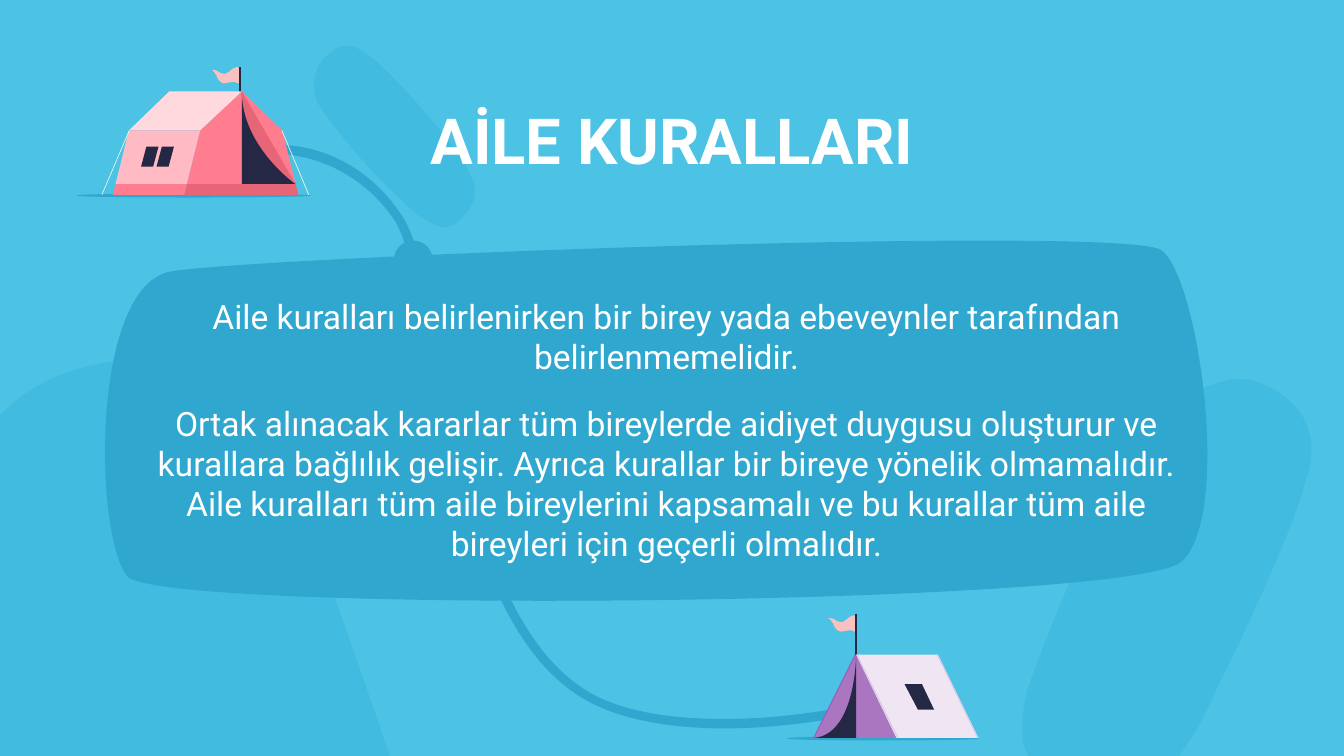
from pptx import Presentation
from pptx.dml.color import RGBColor
from pptx.enum.shapes import MSO_SHAPE as Preset
from pptx.enum.text import MSO_ANCHOR as Anchor, MSO_AUTO_SIZE as AutoSize, PP_ALIGN as Align
from pptx.oxml.ns import qn
from pptx.util import Inches, Pt

SKY = RGBColor(0x4C, 0xC3, 0xE5)
SKY_SHADE = RGBColor(0x42, 0xBB, 0xE0)
OCEAN = RGBColor(0x30, 0xA7, 0xCE)
WHITE = RGBColor(0xFF, 0xFF, 0xFF)
NAVY = RGBColor(0x25, 0x28, 0x45)
FLAG_PINK = RGBColor(0xF9, 0xC2, 0xC0)
CORAL = RGBColor(0xFF, 0x7D, 0x8E)
DARK_CORAL = RGBColor(0xE6, 0x65, 0x77)
LIGHT_CORAL = RGBColor(0xFF, 0xBA, 0xC3)
PALE_CORAL = RGBColor(0xFF, 0xD9, 0xDE)
ROPE_CREAM = RGBColor(0xFD, 0xFB, 0xE2)
PURPLE = RGBColor(0xA9, 0x76, 0xBF)
DARK_PURPLE = RGBColor(0xA1, 0x5C, 0xBF)
LILAC = RGBColor(0xEF, 0xE5, 0xF3)
DARK_LILAC = RGBColor(0xDE, 0xCB, 0xE7)

FONT = "Roboto"

presentation = Presentation()
presentation.slide_width = Inches(10)
presentation.slide_height = Inches(5.625)
slide = presentation.slides.add_slide(presentation.slide_layouts[1])
slide.background.fill.solid()
slide.background.fill.fore_color.rgb = SKY

# The grid has 1000 columns across the slide, and square cells
CELL = presentation.slide_width // 1000
BOTTOM = presentation.slide_height / CELL


def paint(shape, color):
    shape.shadow.inherit = False
    shape.fill.solid()
    shape.fill.fore_color.rgb = color
    shape.line.fill.background()


def draw_outline(color, start, *segments, dx=0, dy=0):
    """Two numbers make a straight segment, six make a Bezier curve."""
    points = [start]
    for segment in segments:
        points.extend(zip(segment[::2], segment[1::2]))
    points = [((x + dx) * CELL, (y + dy) * CELL) for x, y in points]
    builder = slide.shapes.build_freeform(*points[0], scale=1.0)
    builder.add_line_segments(points[1:], close=True)
    shape = builder.convert_to_shape()
    paint(shape, color)
    # Join the three straight steps of each curve into one Bezier element
    outline = next(shape.element.iter(qn("a:path")))
    steps = iter(outline.findall(qn("a:lnTo")))
    for segment in segments:
        step = next(steps)
        if len(segment) == 6:
            curve = outline.makeelement(qn("a:cubicBezTo"), {})
            step.addprevious(curve)
            for line in (step, next(steps), next(steps)):
                curve.append(line[0])
                outline.remove(line)


# Background blobs: upper pill, right pill, left hill
draw_outline(SKY_SHADE, (258, 34), (255, 34, 252, 35, 249, 37), (240, 42, 235, 50, 234, 60),
             (233, 64, 234, 70, 236, 76), (238, 79, 241, 83, 244, 88),
             (261, 110, 280, 132, 301, 151), (308, 158, 314, 163, 323, 167),
             (325, 168, 328, 169, 331, 169), (335, 169, 339, 167, 342, 164),
             (346, 160, 349, 156, 352, 151), (354, 146, 354, 142, 353, 137),
             (351, 132, 349, 129, 347, 124), (339, 111, 330, 99, 320, 88),
             (310, 76, 301, 66, 290, 55), (283, 48, 276, 41, 266, 36),
             (263, 34, 261, 34, 258, 34))
draw_outline(SKY_SHADE, (923, 282), (918, 282, 914, 282, 909, 284), (893, 288, 879, 297, 869, 309),
             (856, 322, 846, 337, 834, 355), (832, 359, 829, 364, 826, 371),
             (804, 412, 786, 455, 770, 498), (765, 510, 761, 523, 761, 537),
             (760, 546, 761, 555, 765, BOTTOM), (877, BOTTOM), (884, 554, 890, 544, 895, 534),
             (902, 521, 907, 508, 914, 495), (933, 455, 952, 415, 967, 373),
             (970, 365, 971, 357, 974, 350), (981, 319, 967, 297, 938, 285),
             (933, 283, 928, 282, 923, 282))
draw_outline(SKY_SHADE, (107, 267), (103, 267, 98, 267, 94, 268), (57, 271, 24, 284, 0, 309),
             (0, BOTTOM), (290, BOTTOM), (276, 521, 261, 478, 246, 436),
             (229, 389, 207, 343, 176, 302), (158, 278, 134, 267, 107, 267))

# Trail between the tents, with its three stops
draw_outline(OCEAN, (210, 108), (210, 115), (213, 115, 260, 116, 293, 163),
             (304, 180, 312, 221, 322, 268), (340, 359, 363, 472, 428, 516),
             (457, 536, 500, 542, 539, 542), (584, 542, 622, 534, 625, 534), (623, 527),
             (623, 527, 584, 535, 539, 535), (501, 535, 459, 530, 432, 511),
             (369, 468, 347, 356, 328, 266), (319, 218, 311, 177, 298, 159),
             (264, 109, 216, 108, 210, 108))
for left, top in ((293, 179), (321, 293), (354, 407)):
    box = [value * CELL for value in (left, top, 29, 29)]
    paint(slide.shapes.add_shape(Preset.OVAL, *box), OCEAN)

# Flags, drawn from the flag's top left corner
for left, top in ((616, 458), (157, 50)):
    draw_outline(FLAG_PINK, (19, 0), (17, 0, 15, 2, 14, 3), (13, 4, 11, 5, 10, 5),
                 (8, 5, 6, 4, 5, 3), (4, 2, 2, 2, 0, 2), (2, 2, 3, 5, 4, 6),
                 (5, 9, 7, 12, 10, 12), (12, 12, 14, 11, 17, 11), (18, 11, 20, 12, 21.5, 12.5),
                 (21.5, 1), (21, 0, 20, 0, 19, 0), dx=left, dy=top)

# Flagpoles
for left, top, width, height in ((636, 457, 1.5, 32), (178, 50, 1, 20)):
    draw_outline(NAVY, (0, 0), (0, height), (width, height), (width, 0), dx=left, dy=top)

# Ground shadows, drawn from their centre
for x, y, reach in ((657, 549.5, 71.5), (144, 145.5, 87)):
    bend = reach * 0.55
    draw_outline(OCEAN, (0, -1.5), (-bend, -1.5, -reach, -1, -reach, 0),
                 (-reach, 1, -bend, 1.5, 0, 1.5), (bend, 1.5, reach, 1, reach, 0),
                 (reach, -1, bend, -1.5, 0, -1.5), dx=x, dy=y)

# Purple tent
draw_outline(PURPLE, (637, 487), (606, 549), (667, 549), (637, 487))
draw_outline(LILAC, (637, 487), (667, 549), (728, 549), (697, 487))
draw_outline(NAVY, (673, 509), (683, 528), (695, 528), (686, 509))
draw_outline(NAVY, (637, 487), (637, 487, 637, 546, 606, 549), (637, 549), (637, 487))
for color, top_x, foot_x in ((DARK_LILAC, 637, 667.5), (DARK_PURPLE, 636, 605),
                             (DARK_LILAC, 697, 727)):
    draw_outline(color, (top_x, 487), (foot_x, 549), (foot_x + 1, 549), (top_x + 1, 487))

# Coral tent
draw_outline(CORAL, (180, 68), (149, 97), (139, 137), (220, 137), (210, 97), (180, 68))
draw_outline(NAVY, (180, 68), (180, 137), (220, 137), (193, 100), (180, 68))
draw_outline(DARK_CORAL, (139, 137), (137, 145), (222, 145), (220, 137))
draw_outline(PALE_CORAL, (126, 68), (96, 97), (149, 97), (180, 68))
draw_outline(DARK_CORAL, (180, 68), (180, 109, 220, 137, 220, 137), (180, 68))
draw_outline(LIGHT_CORAL, (96, 97), (86, 137), (139, 137), (149, 97))
draw_outline(CORAL, (86, 137), (84, 145), (137, 145), (139, 137))
for left in (105, 116.5):
    draw_outline(NAVY, (left + 4, 109), (left, 124), (left + 9, 124), (left + 13, 109))
for top_x, foot_x in ((209.5, 229.5), (96, 75.5)):
    draw_outline(ROPE_CREAM, (top_x, 97), (foot_x, 145), (foot_x + 0.5, 145), (top_x + 0.5, 97))

# Text card
draw_outline(OCEAN, (731, 179), (531, 179, 173, 194, 127, 202), (67, 213, 70, 400, 95, 429),
             (106, 441, 246, 447, 405, 447), (614, 447, 857, 437, 879, 418),
             (917, 385, 892, 206, 864, 186), (856, 181, 804, 179, 731, 179))

# Title and body text, in front of the drawing
title, body = slide.shapes.title, slide.placeholders[1]
title.text_frame.text = "AİLE KURALLARI"
body.text_frame.text = (
    "Aile kuralları belirlenirken bir birey yada ebeveynler tarafından belirlenmemelidir.\n"
    "Ortak alınacak kararlar tüm bireylerde aidiyet duygusu oluşturur ve kurallara bağlılık "
    "gelişir. Ayrıca kurallar bir bireye yönelik olmamalıdır. Aile kuralları tüm aile "
    "bireylerini kapsamalı ve bu kurallar tüm aile bireyleri için geçerli olmalıdır.")

for shape, box, size, bold in ((title, (79, 65, 842, 74), 34, True),
                               (body, (106, 210, 780, 228), 18, False)):
    shape.element.getparent().append(shape.element)
    shape.left, shape.top, shape.width, shape.height = (value * CELL for value in box)
    frame = shape.text_frame
    frame.word_wrap = True
    frame.auto_size = AutoSize.NONE
    frame.vertical_anchor = Anchor.TOP
    frame.margin_left = frame.margin_right = frame.margin_top = frame.margin_bottom = Inches(0.1)
    for index, paragraph in enumerate(frame.paragraphs):
        paragraph.alignment = Align.CENTER
        paragraph.line_spacing = 1.0
        paragraph.space_before = Pt(14 * index)
        properties = paragraph._p.get_or_add_pPr()
        properties.set("marL", "0")
        properties.set("indent", "0")
        properties.append(properties.makeelement(qn("a:buNone"), {}))
        for run in paragraph.runs:
            run.font.name = FONT
            run.font.size = Pt(size)
            run.font.bold = bold
            run.font.color.rgb = WHITE

presentation.save("out.pptx")
